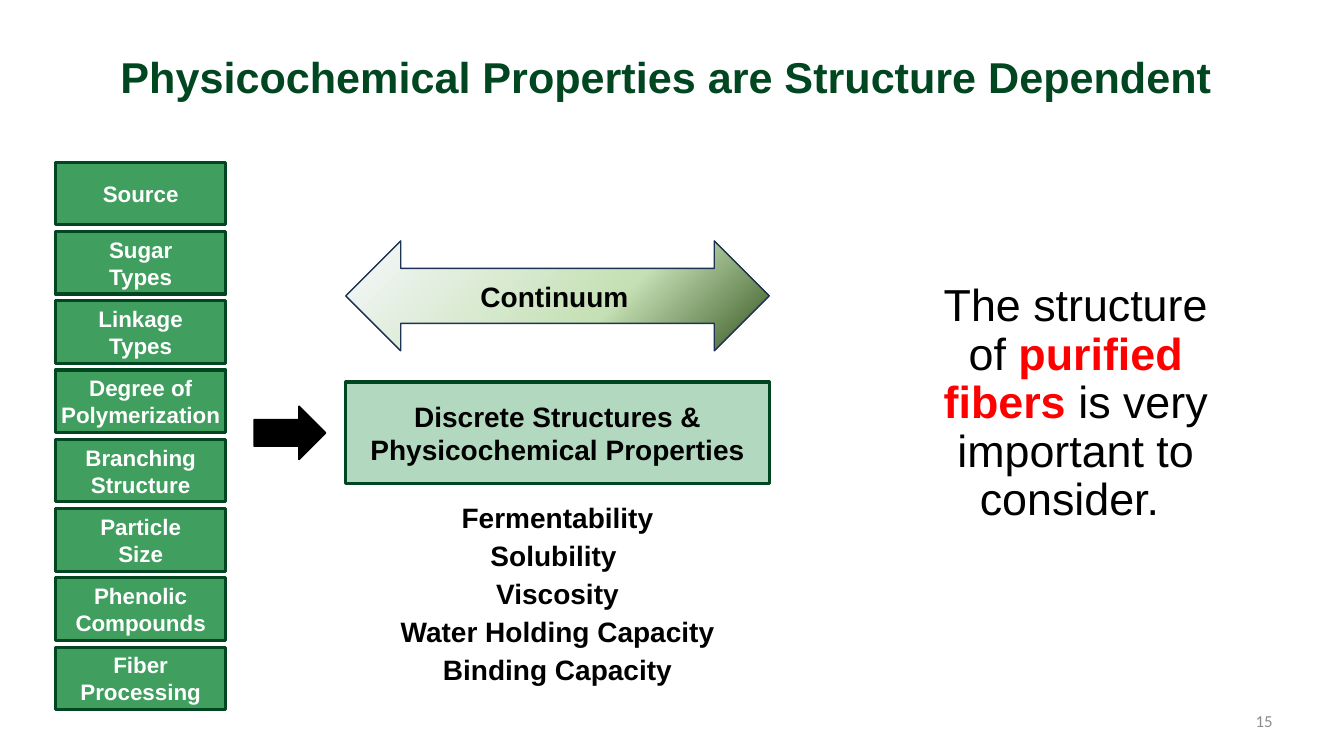
"""Build a slide on how fiber structure determines physicochemical properties."""
from dataclasses import dataclass

from lxml import etree
from pptx import Presentation
from pptx.dml.color import RGBColor
from pptx.enum.shapes import MSO_SHAPE
from pptx.enum.text import MSO_ANCHOR, MSO_AUTO_SIZE, PP_ALIGN
from pptx.oxml import parse_xml
from pptx.oxml.ns import nsdecls, qn
from pptx.shapes.autoshape import Shape
from pptx.slide import Slide
from pptx.util import Inches, Pt

RECTANGLE = MSO_SHAPE.RECTANGLE
RIGHT_ARROW = MSO_SHAPE.RIGHT_ARROW
DOUBLE_ARROW = MSO_SHAPE.LEFT_RIGHT_ARROW
TOP, MIDDLE = MSO_ANCHOR.TOP, MSO_ANCHOR.MIDDLE
CENTER, RIGHT = PP_ALIGN.CENTER, PP_ALIGN.RIGHT
NO_AUTOFIT = MSO_AUTO_SIZE.NONE

DARK_GREEN = RGBColor(0x00, 0x46, 0x20)
GREEN = RGBColor(0x40, 0x9E, 0x5F)
NAVY = RGBColor(0x1E, 0x32, 0x56)
GRAY = RGBColor(0x8C, 0x8C, 0x8C)
RED = RGBColor(0xFF, 0x00, 0x00)
BLACK = RGBColor(0x00, 0x00, 0x00)
WHITE = RGBColor(0xFF, 0xFF, 0xFF)
GRADIENT_STOPS = (
    (0, RGBColor(0xF6, 0xF8, 0xFC)),
    (62, RGBColor(0xC5, 0xE0, 0xB4)),
    (100, RGBColor(0x38, 0x57, 0x23)),
)

FACTORS = (
    "Source",
    "Sugar\nTypes",
    "Linkage\nTypes",
    "Degree of Polymerization",
    "Branching Structure",
    "Particle\nSize",
    "Phenolic Compounds",
    "Fiber\nProcessing",
)
FACTORS_TOP, LAST_FACTOR_TOP = 1.61, 6.42
FACTOR_PITCH = (LAST_FACTOR_TOP - FACTORS_TOP) / (len(FACTORS) - 1)
PROPERTIES = (
    "Fermentability\nSolubility \nViscosity\nWater Holding Capacity\nBinding Capacity"
)
MIDDLE_LEFT, MIDDLE_WIDTH = 3.43, 4.2


@dataclass(frozen=True)
class Box:
    """Place and size in inches."""

    left: float
    top: float
    width: float
    height: float


@dataclass(frozen=True)
class TextStyle:
    """Look of all the text in one shape."""

    size: float
    color: RGBColor = BLACK
    bold: bool = True
    font_name: str = "Arial"
    alignment: PP_ALIGN = CENTER
    anchor: MSO_ANCHOR = MIDDLE
    space_after: float = 0


TITLE_STYLE = TextStyle(30.8, DARK_GREEN)
FACTOR_STYLE = TextStyle(16, WHITE)
RESULT_STYLE = TextStyle(20)
LIST_STYLE = TextStyle(20, anchor=TOP, space_after=3)
BODY_STYLE = TextStyle(32, bold=False, anchor=TOP)
NUMBER_STYLE = TextStyle(12, GRAY, False, "Calibri", RIGHT)


def place(shape: Shape, box: Box) -> None:
    """Move and resize a shape."""
    shape.left, shape.top = Inches(box.left), Inches(box.top)
    shape.width, shape.height = Inches(box.width), Inches(box.height)


def format_text(shape: Shape, style: TextStyle) -> None:
    """Apply a text style to every run of a shape."""
    text_frame = shape.text_frame
    text_frame.word_wrap = True
    text_frame.auto_size = NO_AUTOFIT
    text_frame.vertical_anchor = style.anchor
    for paragraph in text_frame.paragraphs:
        paragraph.alignment = style.alignment
        paragraph.space_before = Pt(0)
        paragraph.space_after = Pt(style.space_after)
        for run in paragraph.runs:
            run.font.name = style.font_name
            run.font.size = Pt(style.size)
            run.font.bold = style.bold
            run.font.color.rgb = style.color


def add_figure(slide: Slide, kind: MSO_SHAPE, box: Box, fill: RGBColor,
               line: RGBColor, line_width: float) -> Shape:
    """Add a filled and outlined preset shape."""
    shape = slide.shapes.add_shape(kind, 0, 0, 0, 0)
    place(shape, box)
    shape.shadow.inherit = False
    shape.fill.solid()
    shape.fill.fore_color.rgb = fill
    shape.line.color.rgb = line
    shape.line.width = Pt(line_width)
    return shape


def add_panel(slide: Slide, box: Box, text: str, style: TextStyle) -> Shape:
    """Add a green rectangle with a label and no insets."""
    panel = add_figure(slide, RECTANGLE, box, GREEN, DARK_GREEN, 2.25)
    text_frame = panel.text_frame
    text_frame.margin_left = text_frame.margin_right = 0
    text_frame.margin_top = text_frame.margin_bottom = 0
    text_frame.text = text
    format_text(panel, style)
    return panel


def add_label(slide: Slide, box: Box, text: str, style: TextStyle) -> None:
    """Add a text box."""
    label = slide.shapes.add_textbox(0, 0, 0, 0)
    place(label, box)
    label.text_frame.text = text
    format_text(label, style)


def set_opacity(shape: Shape, percent: int) -> None:
    """Make a solid fill partly transparent."""
    color = shape.fill._xPr.find(qn("a:solidFill"))[0]
    etree.SubElement(color, qn("a:alpha")).set("val", str(percent * 1000))


def set_radial_gradient(shape: Shape) -> None:
    """Replace a solid fill by a gradient that starts at the top left."""
    stops = "".join(
        f'<a:gs pos="{position * 1000}"><a:srgbClr val="{color}"/></a:gs>'
        for position, color in GRADIENT_STOPS
    )
    gradient = parse_xml(
        f'<a:gradFill {nsdecls("a")} rotWithShape="1"><a:gsLst>{stops}</a:gsLst>'
        '<a:path path="circle"><a:fillToRect r="100000" b="100000"/></a:path>'
        "</a:gradFill>"
    )
    solid = shape.fill._xPr.find(qn("a:solidFill"))
    solid.getparent().replace(solid, gradient)


def fill_body(body: Shape) -> None:
    """Write the takeaway with its key words emphasized."""
    place(body, Box(9.07, 2.76, 3.2, 2.53))
    paragraph = body.text_frame.paragraphs[0]
    properties = paragraph._p.get_or_add_pPr()
    properties.set("marL", "0")
    properties.set("indent", "0")
    etree.SubElement(properties, qn("a:buNone"))
    for text in ("The structure of ", "purified fibers ", "is very important to consider. "):
        paragraph.add_run().text = text
    format_text(body, BODY_STYLE)
    paragraph.line_spacing = 0.9
    key_words = paragraph.runs[1]
    key_words.font.bold = True
    key_words.font.color.rgb = RED


def main() -> None:
    """Build and save the presentation."""
    presentation = Presentation()
    presentation.slide_width = Inches(13.33)
    presentation.slide_height = Inches(7.5)
    slide = presentation.slides.add_slide(presentation.slide_layouts[1])

    title = slide.shapes.title
    place(title, Box(0.67, 0.3, 12, 0.92))
    title.text_frame.text = "Physicochemical Properties are Structure Dependent "
    format_text(title, TITLE_STYLE)
    fill_body(slide.placeholders[1])

    for index, factor in enumerate(FACTORS):
        top = FACTORS_TOP + index * FACTOR_PITCH
        add_panel(slide, Box(0.55, top, 1.69, 0.62), factor, FACTOR_STYLE)

    add_figure(slide, RIGHT_ARROW, Box(2.52, 4.03, 0.71, 0.53), BLACK, BLACK, 1)
    result = add_panel(slide, Box(MIDDLE_LEFT, 3.79, MIDDLE_WIDTH, 1.01),
                       "Discrete Structures & Physicochemical Properties", RESULT_STYLE)
    set_opacity(result, 40)
    add_label(slide, Box(MIDDLE_LEFT, 4.92, MIDDLE_WIDTH, 1.95), PROPERTIES, LIST_STYLE)

    continuum = add_figure(slide, DOUBLE_ARROW, Box(MIDDLE_LEFT, 2.39, MIDDLE_WIDTH, 1.09),
                           WHITE, NAVY, 1)
    set_radial_gradient(continuum)
    add_label(slide, Box(4.52, 2.72, 1.96, 0.44), "Continuum", LIST_STYLE)
    add_label(slide, Box(9.61, 6.95, 3.11, 0.4), "15", NUMBER_STYLE)
    presentation.save("out.pptx")


if __name__ == "__main__":
    main()
